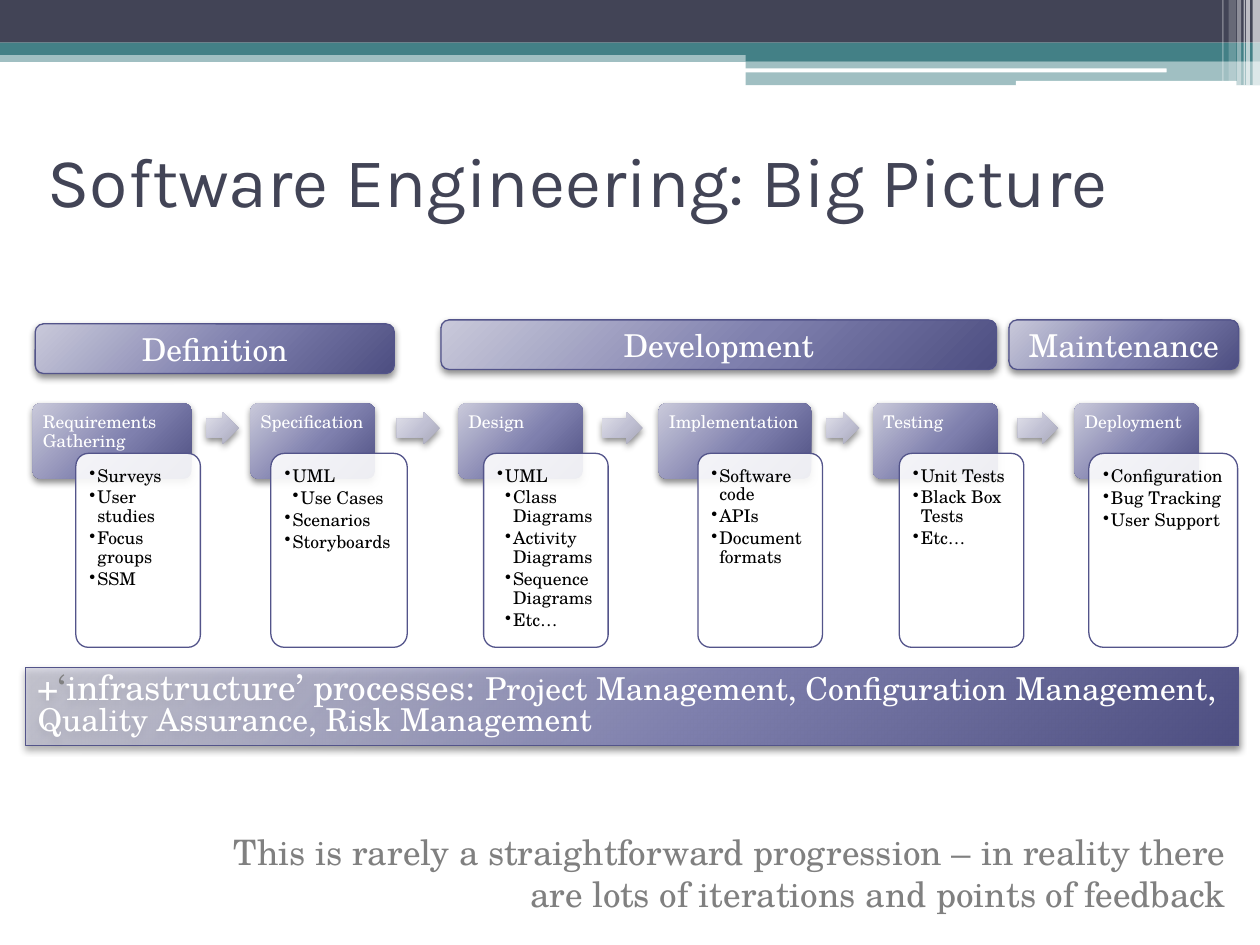
from pptx import Presentation
from pptx.dml.color import RGBColor
from pptx.enum.shapes import MSO_SHAPE
from pptx.enum.text import MSO_ANCHOR, PP_ALIGN
from pptx.oxml import parse_xml
from pptx.oxml.ns import nsdecls, qn
from pptx.util import Cm, Pt

RECT, ROUND = MSO_SHAPE.RECTANGLE, MSO_SHAPE.ROUNDED_RECTANGLE
ARROW = MSO_SHAPE.RIGHT_ARROW
TOP, MIDDLE = MSO_ANCHOR.TOP, MSO_ANCHOR.MIDDLE
LEFT, CENTER, RIGHT = PP_ALIGN.LEFT, PP_ALIGN.CENTER, PP_ALIGN.RIGHT

HEADING_FONT, BODY_FONT = "Karla", "TeX Gyre Schola"
NAVY, TEAL, VIOLET = "424456", "438086", "53548A"
WHITE, BLACK, GREY = "FFFFFF", "000000", "808080"
VIOLET_STOPS = [(0, "C9C9DA", 100), (55, "7F80AE", 100), (100, "4D4E81", 100)]
PALE_STOPS = [(0, "E1E1EA", 100), (55, "C0C0D3", 100), (100, "A7A7B7", 100)]
BAR_STOPS = [(0, "C9C9DA", 59)] + VIOLET_STOPS[1:]
INSETS = (0.25, 0.13, 0.25, 0.13)

# shape, left, top, width, height, colour, opacity
BANDS = [
    (RECT, 0, 1.02, 25.4, 0.23, TEAL, 50),
    (RECT, 0, 0, 25.4, 0.86, NAVY, 100),
    (RECT, 0, 0.86, 25.4, 0.25, TEAL, 100),
    (RECT, 15.03, 0.99, 10.37, 0.24, TEAL, 100),
    (RECT, 15.03, 1.23, 10.37, 0.49, TEAL, 50),
    (ROUND, 15.01, 1.38, 8.51, 0.08, WHITE, 100),
    (ROUND, 20.48, 1.63, 4.45, 0.1, WHITE, 100),
]
# left, width, height, opacity
STRIPES = [
    (25.25, 0.15, 1.72, 65), (25.12, 0.08, 1.72, 65), (25.07, 0.03, 1.72, 60),
    (24.94, 0.08, 1.72, 40), (24.77, 0.15, 1.63, 20), (24.64, 0.03, 1.63, 30),
]
# heading, heading left and width, card left and width, (level, item) list
STAGES = [
    ("Requirements Gathering", 0.66, 3.2, 1.53, 2.51,
     [(1, "Surveys"), (1, "User studies"), (1, "Focus groups"), (1, "SSM")]),
    ("Specification", 5.05, 2.51, 5.46, 2.75,
     [(1, "UML"), (2, "Use Cases"), (1, "Scenarios"), (1, "Storyboards")]),
    ("Design", 9.24, 2.51, 9.75, 2.51,
     [(1, "UML"), (2, "Class Diagrams"), (2, "Activity Diagrams"),
      (2, "Sequence Diagrams"), (2, "Etc…")]),
    ("Implementation", 13.28, 3.07, 14.07, 2.51,
     [(1, "Software code"), (1, "APIs"), (1, "Document formats")]),
    ("Testing", 17.6, 2.51, 18.13, 2.51,
     [(1, "Unit Tests"), (1, "Black Box Tests"), (1, "Etc…")]),
    ("Deployment", 21.66, 2.51, 21.95, 3,
     [(1, "Configuration"), (1, "Bug Tracking"), (1, "User Support")]),
]
ARROWS = [(4.16, 0.65), (8, 0.86), (12.14, 0.81), (16.66, 0.66), (20.52, 0.81)]
PHASES = [
    ("Definition", 0.71, 6.53, 7.24),
    ("Development", 8.89, 6.45, 11.2),
    ("Maintenance", 20.34, 6.45, 4.63),
]


def colour(value):
    return RGBColor.from_string(value)


class SlideBuilder:
    def __init__(self, slide, font):
        self.slide = slide
        self.font = font

    def shape(self, kind, left, top, width, height, fill=None, opacity=100,
              line=None, adjust=()):
        shape = self.slide.shapes.add_shape(
            kind, Cm(left), Cm(top), Cm(width), Cm(height))
        shape.shadow.inherit = False
        for index, value in enumerate(adjust):
            shape.adjustments[index] = value
        if line:
            shape.line.color.rgb = colour(line)
            shape.line.width = Pt(0.75)
        else:
            shape.line.fill.background()
        if fill:
            shape.fill.solid()
            shape.fill.fore_color.rgb = colour(fill)
        if opacity < 100:
            tint = shape.element.spPr.find(qn("a:solidFill"))[0]
            tint.append(parse_xml(
                f'<a:alpha {nsdecls("a")} val="{opacity * 1000}"/>'))
        return shape

    def raised(self, kind, left, top, width, height, stops, **style):
        """Add a shape with a radial gradient and a soft drop shadow."""
        shape = self.shape(kind, left, top, width, height, **style)
        properties = shape.element.spPr
        stop_xml = "".join(
            f'<a:gs pos="{position * 1000}"><a:srgbClr val="{value}">'
            f'<a:alpha val="{alpha * 1000}"/></a:srgbClr></a:gs>'
            for position, value, alpha in stops)
        properties.find(qn("a:prstGeom")).addnext(parse_xml(
            f'<a:gradFill {nsdecls("a")} rotWithShape="1">'
            f'<a:gsLst>{stop_xml}</a:gsLst><a:path path="circle">'
            '<a:fillToRect l="-40000" t="-90000" r="140000" b="190000"/>'
            '</a:path></a:gradFill>'))
        properties.find(qn("a:effectLst")).append(parse_xml(
            f'<a:outerShdw {nsdecls("a")} blurRad="50800" dist="25400" '
            'dir="5400000" rotWithShape="0"><a:srgbClr val="000000">'
            '<a:alpha val="45000"/></a:srgbClr></a:outerShdw>'))
        return shape

    def text_box(self, left, top, width, height):
        return self.slide.shapes.add_textbox(
            Cm(left), Cm(top), Cm(width), Cm(height))

    def frame(self, shape, anchor=TOP, insets=INSETS):
        frame = shape.text_frame
        frame.word_wrap = True
        frame.vertical_anchor = anchor
        (frame.margin_left, frame.margin_top,
         frame.margin_right, frame.margin_bottom) = map(Cm, insets)
        return frame

    def add_runs(self, paragraph, runs, align=LEFT, spacing=1.0, font=None):
        """Fill a paragraph with (text, size, colour) runs."""
        paragraph.alignment = align
        paragraph.line_spacing = spacing
        for text, size, value in runs:
            run = paragraph.add_run()
            run.text = text
            run.font.name = font or self.font
            run.font.size = Pt(size)
            run.font.color.rgb = colour(value)

    def bullets(self, frame, items):
        for index, (level, text) in enumerate(items):
            paragraph = frame.add_paragraph() if index else frame.paragraphs[0]
            self.add_runs(paragraph, [(text, 10, BLACK)], spacing=0.9)
            paragraph.space_after = Pt(1.7)
            properties = paragraph._p.get_or_add_pPr()
            properties.set("marL", str(Cm(0.16 * level)))
            properties.set("indent", str(-Cm(0.16)))
            properties.append(parse_xml(
                f'<a:buChar {nsdecls("a")} char="•"/>'))


def main():
    presentation = Presentation()
    presentation.slide_width, presentation.slide_height = Cm(25.4), Cm(19.05)
    slide = presentation.slides.add_slide(presentation.slide_layouts[6])
    builder = SlideBuilder(slide, BODY_FONT)

    for kind, left, top, width, height, fill, opacity in BANDS:
        builder.shape(kind, left, top, width, height, fill, opacity)
    for left, width, height, opacity in STRIPES:
        builder.shape(RECT, left, 0, width, height, WHITE, opacity)

    title = builder.frame(builder.text_box(0.71, 2.13, 22.86, 2.97), MIDDLE)
    builder.add_runs(title.paragraphs[0],
                     [("Software Engineering: Big Picture", 40, NAVY)],
                     font=HEADING_FONT)

    for heading, left, width, card_left, card_width, items in STAGES:
        head = builder.raised(ROUND, left, 8.13, width, 1.52, VIOLET_STOPS,
                              adjust=[0.1])
        frame = builder.frame(head, insets=(0.16, 0.16, 0.16, 0.1))
        builder.add_runs(frame.paragraphs[0], [(heading, 10, WHITE)],
                         spacing=0.9)
        card = builder.shape(ROUND, card_left, 9.14, card_width, 3.91,
                             WHITE, 90, VIOLET, adjust=[0.1])
        builder.bullets(builder.frame(card, insets=(0.2,) * 4), items)
    for left, width in ARROWS:
        builder.raised(ARROW, left, 8.31, width, 0.64, PALE_STOPS,
                       adjust=[0.6, 0.5])

    remark = builder.frame(builder.text_box(3.3, 16.61, 21.67, 1.96))
    builder.add_runs(remark.paragraphs[0], [
        ("This is rarely a straightforward progression – in reality there "
         "are lots of iterations and points of feedback", 20, GREY)], RIGHT)

    for name, left, top, width in PHASES:
        phase = builder.raised(ROUND, left, top, width, 1, VIOLET_STOPS,
                               line=VIOLET)
        builder.add_runs(builder.frame(phase, MIDDLE).paragraphs[0],
                         [(name, 18, WHITE)], CENTER)

    bar = builder.raised(RECT, 0.51, 13.46, 24.46, 1.57, BAR_STOPS, line=VIOLET)
    builder.add_runs(builder.frame(bar).paragraphs[0], [
        ("+", 20, WHITE),
        ("‘", 20, GREY),
        ("infrastructure’ processes: ", 20, WHITE),
        ("Project Management, Configuration Management, "
         "Quality Assurance, Risk Management", 18, WHITE)], spacing=0.8)

    presentation.save("out.pptx")


if __name__ == "__main__":
    main()
